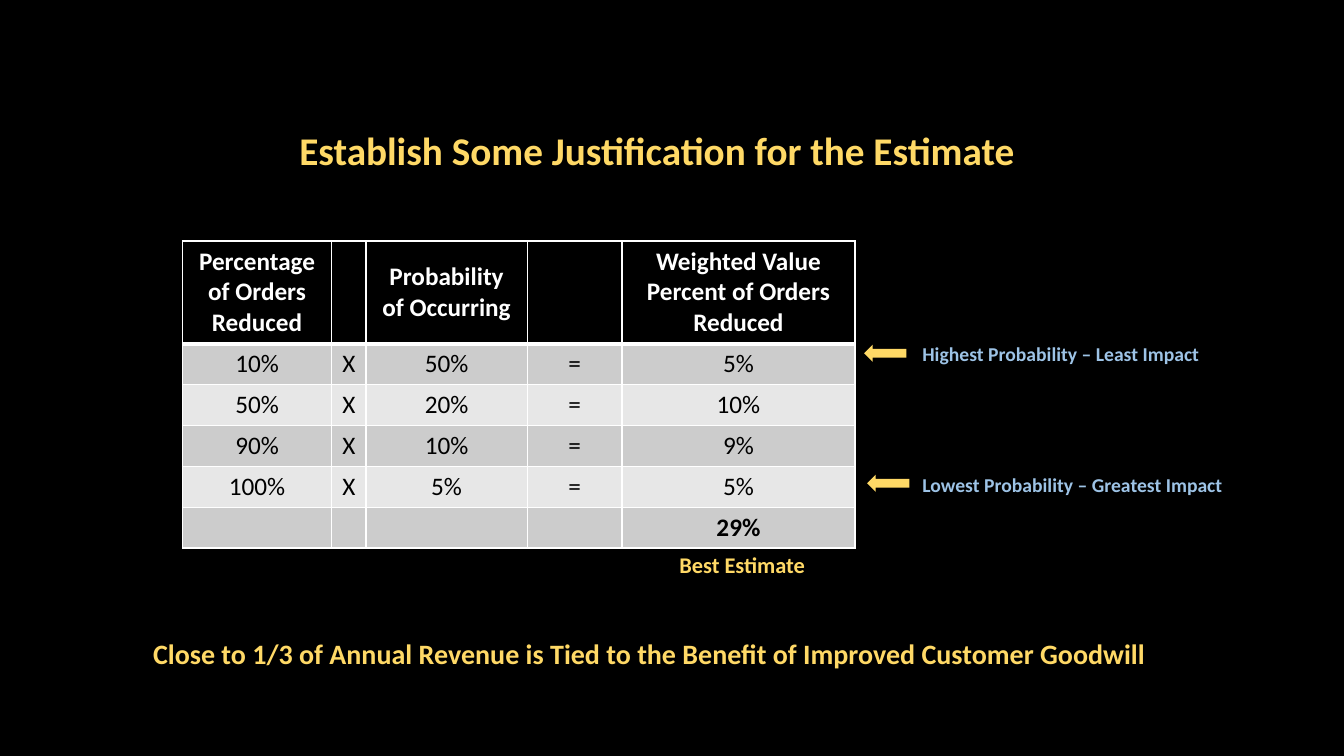
from dataclasses import dataclass

from lxml.etree import SubElement
from pptx import Presentation
from pptx.dml.color import RGBColor
from pptx.enum.shapes import MSO_SHAPE
from pptx.enum.text import MSO_ANCHOR, MSO_AUTO_SIZE, PP_ALIGN
from pptx.oxml.ns import qn
from pptx.slide import Slide
from pptx.table import _Cell
from pptx.text.text import _Paragraph
from pptx.util import Inches, Pt


@dataclass(frozen=True)
class Theme:
    font: str = "Calibri"
    background: str = "000000"
    accent: str = "FFD966"
    note: str = "9DC3E6"
    header_text: str = "FFFFFF"
    body_text: str = "000000"
    border: str = "FFFFFF"
    bands: tuple[str, str] = ("CCCCCC", "E7E7E7")
    title_size: int = 28
    conclusion_size: int = 20
    table_size: int = 18
    estimate_size: int = 16
    note_size: int = 14


@dataclass(frozen=True)
class Label:
    text: str
    left: float
    top: float
    width: float
    height: float
    size: int
    color: str


@dataclass(frozen=True)
class Arrow:
    left: float
    top: float
    width: float = 0.42
    height: float = 0.17


THEME = Theme()

LABELS = [
    Label("Establish Some Justification for the Estimate",
          2.87, 1.2, 7.39, 0.57, THEME.title_size, THEME.accent),
    Label("Highest Probability – Least Impact",
          9.05, 3.34, 2.97, 0.34, THEME.note_size, THEME.note),
    Label("Lowest Probability – Greatest Impact",
          9.05, 4.64, 3.2, 0.34, THEME.note_size, THEME.note),
    Label("Best Estimate",
          6.64, 5.42, 1.46, 0.37, THEME.estimate_size, THEME.accent),
    Label("Close to 1/3 of Annual Revenue is Tied to the Benefit of Improved Customer Goodwill",
          1.42, 6.27, 10.13, 0.44, THEME.conclusion_size, THEME.accent),
]
ARROWS = [Arrow(8.57, 3.42), Arrow(8.6, 4.71)]

COLUMN_WIDTHS = [1.48, 0.34, 1.6, 0.94, 2.31]
HEADER_HEIGHT = 1.02
ROW_HEIGHT = 0.4
HEADERS = ["Percentage of Orders Reduced", "", "Probability of Occurring", "",
           "Weighted Value\nPercent of Orders Reduced"]
OUTCOMES = [("10%", "50%", "5%"), ("50%", "20%", "10%"),
            ("90%", "10%", "9%"), ("100%", "5%", "5%")]
TOTAL = "29%"


def add_span(para: _Paragraph, text: str, size: int, color: str, bold: bool) -> None:
    span = para.add_run()
    span.text = text
    span.font.name = THEME.font
    span.font.size = Pt(size)
    span.font.bold = bold
    span.font.color.rgb = RGBColor.from_string(color)


def add_label(page: Slide, label: Label) -> None:
    box = page.shapes.add_textbox(Inches(label.left), Inches(label.top),
                                  Inches(label.width), Inches(label.height))
    frame = box.text_frame
    frame.word_wrap = False
    frame.auto_size = MSO_AUTO_SIZE.SHAPE_TO_FIT_TEXT
    add_span(frame.paragraphs[0], label.text, label.size, label.color, True)


def add_arrow(page: Slide, arrow: Arrow) -> None:
    shape = page.shapes.add_shape(MSO_SHAPE.LEFT_ARROW, Inches(arrow.left), Inches(arrow.top),
                                  Inches(arrow.width), Inches(arrow.height))
    shape.shadow.inherit = False
    shape.fill.solid()
    shape.fill.fore_color.rgb = RGBColor.from_string(THEME.accent)
    shape.line.fill.background()


def set_borders(cell: _Cell, top: int, bottom: int) -> None:
    """Draw the four cell edges; top and bottom are widths in points."""
    properties = cell._tc.get_or_add_tcPr()
    for edge, width in {"lnL": 1, "lnR": 1, "lnT": top, "lnB": bottom}.items():
        line = SubElement(properties, qn(f"a:{edge}"), w=str(Pt(width)))
        SubElement(SubElement(line, qn("a:solidFill")), qn("a:srgbClr"), val=THEME.border)


def fill_cell(cell: _Cell, text: str, row: int, bold: bool) -> None:
    is_header = row == 0
    set_borders(cell, top=3 if row == 1 else 1, bottom=3 if is_header else 1)
    fill = THEME.background if is_header else THEME.bands[(row - 1) % 2]
    cell.fill.solid()
    cell.fill.fore_color.rgb = RGBColor.from_string(fill)
    if is_header:
        cell.vertical_anchor = MSO_ANCHOR.MIDDLE
    if not text:
        return
    color = THEME.header_text if is_header else THEME.body_text
    frame = cell.text_frame
    for index, line in enumerate(text.split("\n")):
        para = frame.add_paragraph() if index else frame.paragraphs[0]
        para.alignment = PP_ALIGN.CENTER
        add_span(para, line, THEME.table_size, color, bold)


def add_estimate_table(page: Slide) -> None:
    products = [[share, "X", chance, "=", result] for share, chance, result in OUTCOMES]
    rows = [HEADERS, *products, ["", "", "", "", TOTAL]]
    height = HEADER_HEIGHT + ROW_HEIGHT * (len(rows) - 1)
    table = page.shapes.add_table(len(rows), len(COLUMN_WIDTHS), Inches(1.81), Inches(2.39),
                                  Inches(sum(COLUMN_WIDTHS)), Inches(height)).table
    for column, width in zip(table.columns, COLUMN_WIDTHS):
        column.width = Inches(width)
    for row, texts in enumerate(rows):
        table.rows[row].height = Inches(ROW_HEIGHT if row else HEADER_HEIGHT)
        bold = row in (0, len(rows) - 1)
        for column, text in enumerate(texts):
            fill_cell(table.cell(row, column), text, row, bold)


def main() -> None:
    deck = Presentation()
    deck.slide_width, deck.slide_height = Inches(13.33), Inches(7.5)
    page = deck.slides.add_slide(deck.slide_layouts[6])
    page.background.fill.solid()
    page.background.fill.fore_color.rgb = RGBColor.from_string(THEME.background)
    add_estimate_table(page)
    for label in LABELS:
        add_label(page, label)
    for arrow in ARROWS:
        add_arrow(page, arrow)
    deck.save("out.pptx")


if __name__ == "__main__":
    main()
